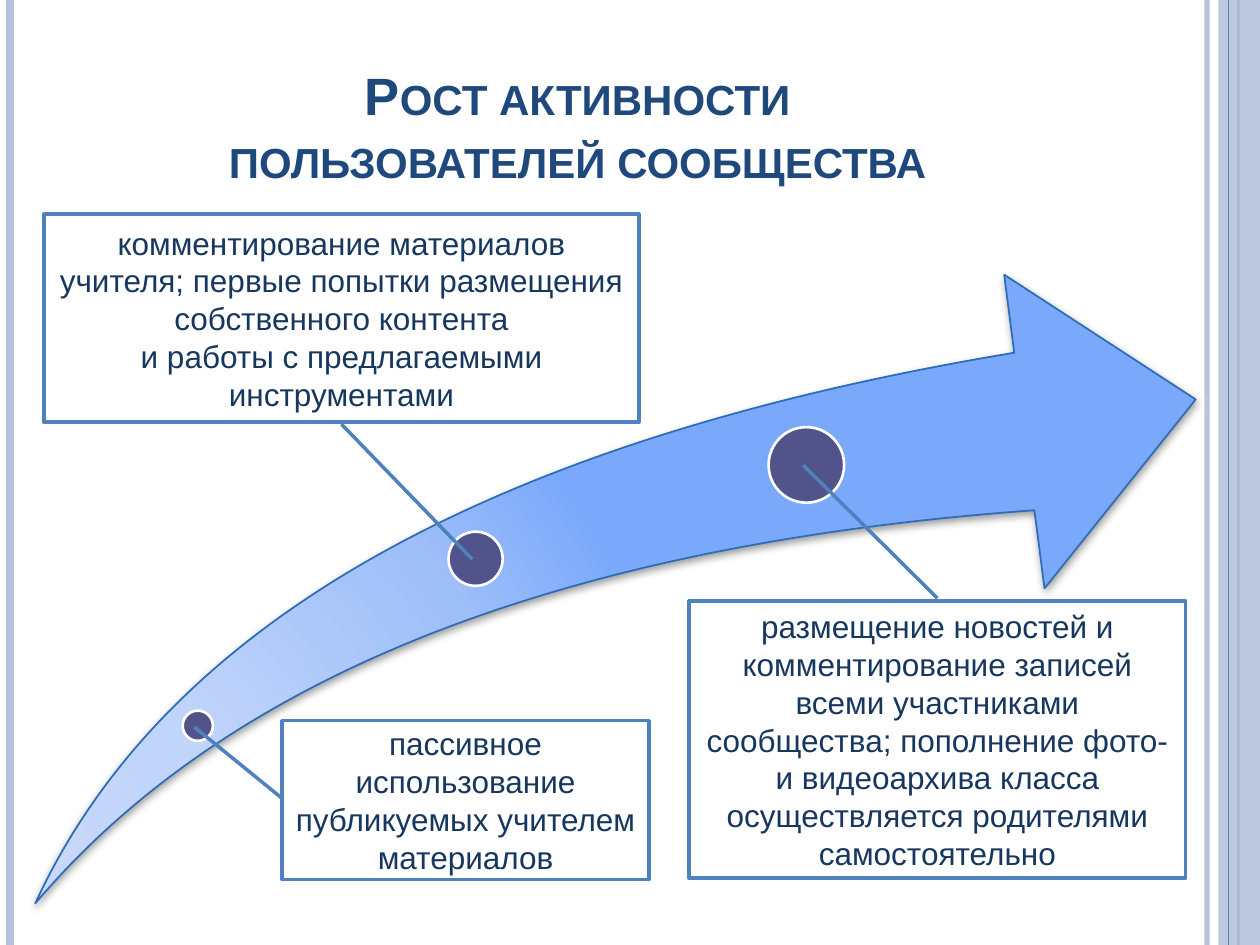
from dataclasses import dataclass

from pptx import Presentation, oxml
from pptx.dml import color
from pptx.enum import shapes, text
from pptx.oxml import ns
from pptx.util import Inches, Pt


@dataclass(frozen=True)
class Theme:
    font: str = "Arial"
    title: str = "1F497D"
    body: str = "17375E"
    accent: str = "4F81BD"
    band: str = "B3C1DB"
    dot: str = "52538A"
    arrow_line: str = "2C6CB9"
    white: str = "FFFFFF"
    title_size: int = 30
    body_size: int = 18


T = Theme()
rgb = color.RGBColor.from_string
A = ns.nsdecls("a")


def paint(s, fill, line, width):
    """Give a shape a flat fill and an outline, either of which may be None."""
    s.shadow.inherit = False
    if fill:
        s.fill.solid()
        s.fill.fore_color.rgb = rgb(fill)
    if line:
        s.line.color.rgb = rgb(line)
        s.line.width = Pt(width)
    else:
        s.line.fill.background()


def write(s, words, anchor, **font):
    """Centre wrapped text in a shape; line breaks are written as \\n."""
    tf = s.text_frame
    tf.word_wrap = True
    tf.vertical_anchor = anchor
    p = tf.paragraphs[0]
    p.text = words
    p.alignment = text.PP_ALIGN.CENTER
    rgb_value = rgb(font.pop("color"))
    for r in p.runs:
        r.font.color.rgb = rgb_value
        for name, value in font.items():
            setattr(r.font, name, value)
    return p


prs = Presentation()
prs.slide_width, prs.slide_height = Inches(10), Inches(7.5)
slide = prs.slides.add_slide(prs.slide_layouts[6])
sp = slide.shapes

# Side stripes; the wide translucent band lies under the last thin line
stripes = [(9.58, T.band, 3, 93), (0.08, T.band, 4.5, 100),
           (9.83, T.accent, 1.5, 100), (9.75, T.accent, 0.75, 100)]
for i, (x, hue, width, alpha) in enumerate(stripes):
    if i == len(stripes) - 1:
        band = sp.add_shape(shapes.MSO_SHAPE.RECTANGLE, Inches(9.67), 0,
                            Inches(0.33), prs.slide_height)
        paint(band, T.band, None, 0)
        band.fill._xPr.find(".//" + ns.qn("a:srgbClr")).append(
            oxml.parse_xml(f'<a:alpha {A} val="87000"/>'))
    s = sp.add_connector(shapes.MSO_CONNECTOR.STRAIGHT, Inches(x), 0,
                         Inches(x), prs.slide_height)
    s.line.color.rgb = rgb(hue)
    s.line.width = Pt(width)
    spPr = s._element.spPr
    if alpha < 100:
        spPr.find(".//" + ns.qn("a:srgbClr")).append(
            oxml.parse_xml(f'<a:alpha {A} val="{alpha * 1000}"/>'))
    spPr.append(oxml.parse_xml(f"<a:effectLst {A}/>"))

# Growth arrow: straight outline first, then its two long sides are curved
growth = sp.add_group_shape().shapes
tail = (0.28, 7.17)
outline = [(8.05, 2.8), (7.97, 2.18), (9.49, 3.17), (8.29, 4.67), (8.21, 4.05), tail]
fb = growth.build_freeform(Inches(tail[0]), Inches(tail[1]))
fb.add_line_segments([(Inches(x), Inches(y)) for x, y in outline], close=True)
arrow = fb.convert_to_shape()
paint(arrow, None, T.arrow_line, 1)
spPr = arrow._element.spPr
sides = spPr.findall(".//" + ns.qn("a:lnTo"))
curves = [(sides[0], [(1.3, 4.95), (3.89, 3.49), outline[0]]),
          (sides[-1], [(4.46, 4.32), (1.81, 5.36), tail])]
for side, points in curves:
    pts = "".join(f'<a:pt x="{Inches(x) - arrow.left}" y="{Inches(y) - arrow.top}"/>'
                  for x, y in points)
    side.getparent().replace(
        side, oxml.parse_xml(f"<a:cubicBezTo {A}>{pts}</a:cubicBezTo>"))

# Arrow gradient, spreading from the tail, and soft shadow
stops = [(0, "C7D8FB"), (30, "C1D5FA"), (75, "9FBFF9"), (100, "7AA9FB")]
gs = "".join(f'<a:gs pos="{pos * 1000}"><a:srgbClr val="{hue}"/></a:gs>'
             for pos, hue in stops)
spPr.find(ns.qn("a:custGeom")).addnext(oxml.parse_xml(
    f'<a:gradFill {A} rotWithShape="1"><a:gsLst>{gs}</a:gsLst><a:path path="circle">'
    '<a:fillToRect l="5000" t="100000" r="120000" b="10000"/></a:path></a:gradFill>'))
spPr.find(ns.qn("a:effectLst")).append(oxml.parse_xml(
    f'<a:outerShdw {A} blurRad="{Pt(4)}" dist="{Pt(2)}" dir="5400000" rotWithShape="0">'
    '<a:srgbClr val="000000"><a:alpha val="40000"/></a:srgbClr></a:outerShdw>'))

# Stage dots
for x, y, size in [(1.45, 5.64, 0.24), (3.56, 4.22, 0.43), (6.1, 3.39, 0.6)]:
    dot = growth.add_shape(shapes.MSO_SHAPE.OVAL, Inches(x), Inches(y),
                           Inches(size), Inches(size))
    paint(dot, T.dot, T.white, 1.5)

# Title in small capitals
title = sp.add_textbox(Inches(0.5), Inches(0.3), Inches(8.17), Inches(1.25))
p = write(title, "Рост активности\vпользователей сообщества", text.MSO_ANCHOR.BOTTOM,
          color=T.title, name=T.font, size=Pt(T.title_size), bold=True)
for r in p.runs:
    r.font._element.set("cap", "small")

# Callouts: box, leader ends as (y, x, y, x) fractions of the box, words
callouts = [
    ((2.24, 5.72, 2.91, 1.26), (0.49, 0, 0.04, -0.24),
     "пассивное использование публикуемых учителем материалов"),
    ((0.35, 1.7, 4.72, 1.65), (1.01, 0.5, 1.66, 0.72),
     "комментирование материалов учителя; первые попытки размещения "
     "собственного контента\vи работы с предлагаемыми инструментами"),
    ((5.47, 4.77, 3.94, 2.2), (-0.49, 0.23, -0.01, 0.5),
     "размещение новостей и комментирование записей всеми участниками "
     "сообщества; пополнение фото- и видеоархива класса осуществляется "
     "родителями самостоятельно"),
]
for box, leader, words in callouts:
    s = sp.add_shape(shapes.MSO_SHAPE.LINE_CALLOUT_1, *map(Inches, box))
    for i, value in enumerate(leader):
        s.adjustments[i] = value
    paint(s, T.white, T.accent, 2)
    write(s, words, text.MSO_ANCHOR.MIDDLE, color=T.body, name=T.font,
          size=Pt(T.body_size))

prs.save("out.pptx")
